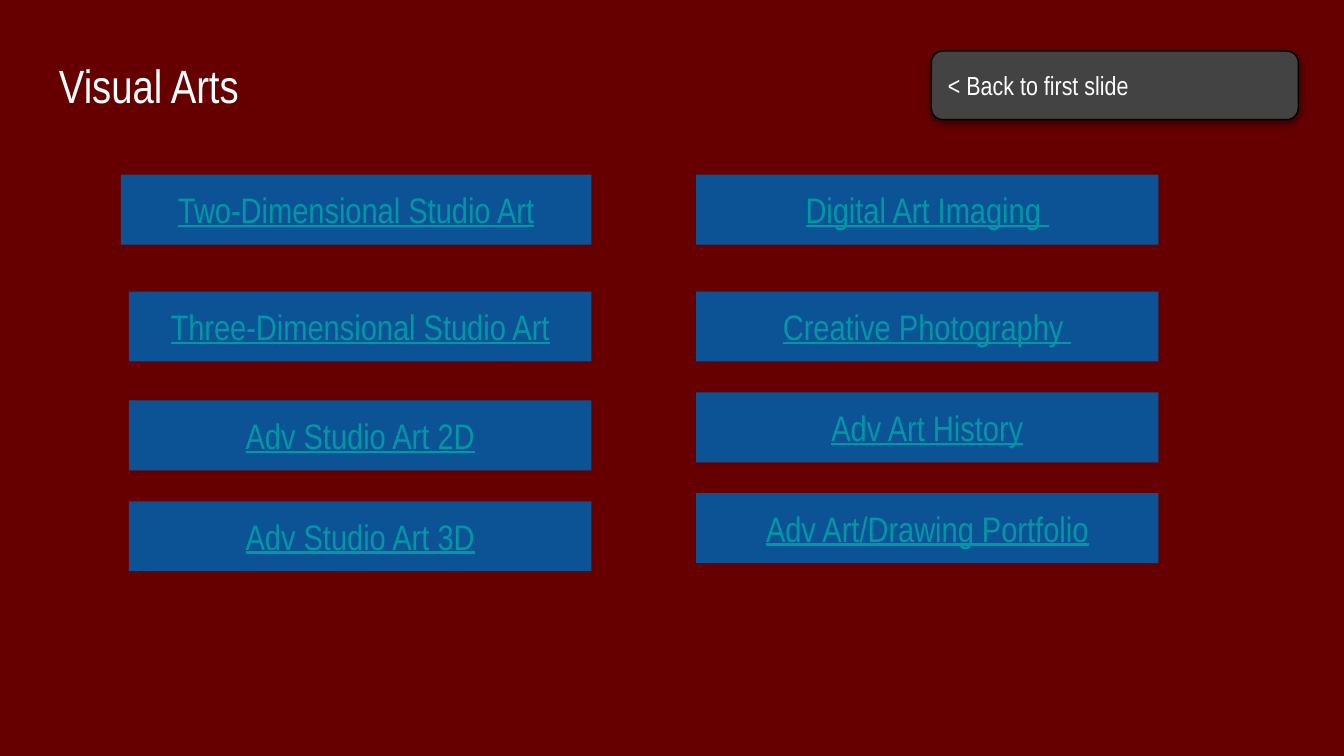
from pptx import Presentation
from pptx.dml.color import RGBColor
from pptx.enum.shapes import MSO_SHAPE
from pptx.enum.text import MSO_ANCHOR, MSO_AUTO_SIZE, PP_ALIGN
from pptx.oxml import parse_xml
from pptx.oxml.ns import nsdecls, qn
from pptx.util import Pt

MAROON = RGBColor(0x66, 0x00, 0x00)
WHITE = RGBColor(0xFF, 0xFF, 0xFF)
BLACK = RGBColor(0x00, 0x00, 0x00)
GRAY = RGBColor(0x43, 0x43, 0x43)
BLUE = RGBColor(0x0B, 0x53, 0x94)
TEAL = RGBColor(0x00, 0x97, 0xA7)

FONT = "Arial Narrow"
INSET = Pt(7.2)
BAR_HEIGHT = 37.44

# Each column: left, width, and (top, course) pairs
COLUMNS = [
    (69.12, 247.68, [
        (93.6, "Two-Dimensional Studio Art"),
        (156.24, "Three-Dimensional Studio Art"),
        (214.56, "Adv Studio Art 2D"),
        (268.56, "Adv Studio Art 3D"),
    ]),
    (372.96, 247.68, [
        (93.6, "Digital Art Imaging "),
        (156.24, "Creative Photography "),
        (210.24, "Adv Art History"),
        (264.24, "Adv Art/Drawing Portfolio"),
    ]),
]
FIRST_BAR_OVERHANG = 4.32  # the first bar reaches further left than its column


def write_text(sp, text, size, color=WHITE, align=PP_ALIGN.LEFT,
               anchor=MSO_ANCHOR.TOP, underline=None, auto_size=MSO_AUTO_SIZE.NONE):
    tf = sp.text_frame
    tf.word_wrap = True
    tf.auto_size = auto_size
    tf.vertical_anchor = anchor
    tf.margin_left = tf.margin_right = tf.margin_top = tf.margin_bottom = INSET
    p = tf.paragraphs[0]
    p.alignment = align
    r = p.add_run()
    r.text = text
    r.font.name = FONT
    r.font.size = Pt(size)
    r.font.color.rgb = color
    r.font.underline = underline


def add_box(s, kind, x, y, w, h, fill):
    sp = s.shapes.add_shape(kind, Pt(x), Pt(y), Pt(w), Pt(h))
    sp.shadow.inherit = False
    sp.fill.solid()
    sp.fill.fore_color.rgb = fill
    sp.line.fill.background()
    return sp


def add_title(s, x, y, w, h):
    sp = s.shapes.add_textbox(Pt(x), Pt(y), Pt(w), Pt(h))
    write_text(sp, "Visual Arts", 25)


def add_back_button(s, x, y, w, h):
    sp = add_box(s, MSO_SHAPE.ROUNDED_RECTANGLE, x, y, w, h, GRAY)
    sp.line.color.rgb = BLACK
    sp.line.width = Pt(0.75)
    # Soft shadow straight below the button
    effects = sp._element.spPr.find(qn("a:effectLst"))
    effects.append(parse_xml(
        f'<a:outerShdw {nsdecls("a")} blurRad="{Pt(4.5)}" dist="{Pt(1.5)}" '
        'dir="5400000" algn="bl" rotWithShape="0"><a:srgbClr val="000000">'
        '<a:alpha val="50000"/></a:srgbClr></a:outerShdw>'))
    write_text(sp, "< Back to first slide", 14, anchor=MSO_ANCHOR.MIDDLE)


def add_course_column(s, x, w, courses, overhang=0):
    for i, (y, course) in enumerate(courses):
        extra = overhang if i == 0 else 0
        sp = add_box(s, MSO_SHAPE.RECTANGLE, x - extra, y, w + extra, BAR_HEIGHT, BLUE)
        write_text(sp, course, 19, color=TEAL, align=PP_ALIGN.CENTER, underline=True,
                   auto_size=MSO_AUTO_SIZE.SHAPE_TO_FIT_TEXT)


def main():
    prs = Presentation()
    prs.slide_width, prs.slide_height = Pt(720), Pt(405)
    s = prs.slides.add_slide(prs.slide_layouts[6])
    s.background.fill.solid()
    s.background.fill.fore_color.rgb = MAROON

    # Header
    add_title(s, 24.48, 23.04, 671.04, 45.36)
    add_back_button(s, 498.96, 27.36, 196.56, 36.72)

    # Course bars
    for i, (x, w, courses) in enumerate(COLUMNS):
        add_course_column(s, x, w, courses, overhang=FIRST_BAR_OVERHANG if i == 0 else 0)

    prs.save("out.pptx")


if __name__ == "__main__":
    main()
